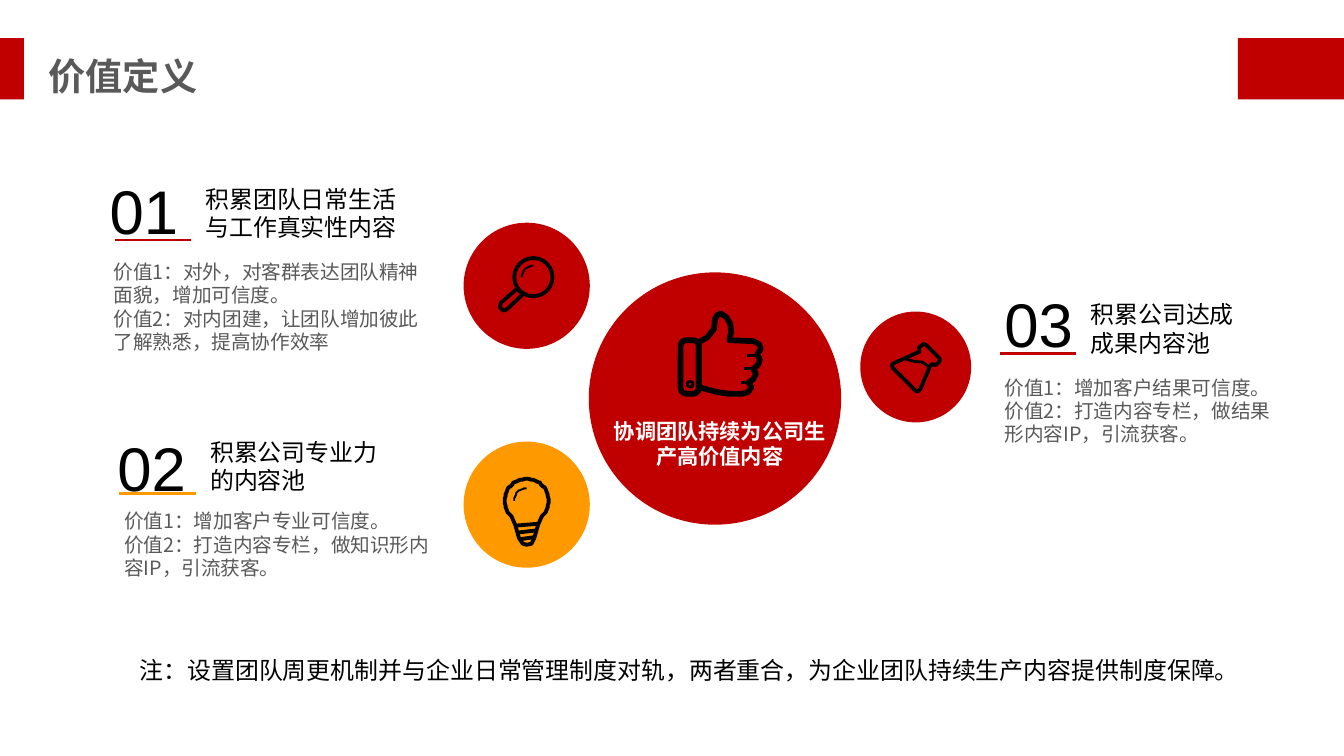
from dataclasses import dataclass
from math import cos, radians, sin

from lxml.etree import SubElement
from pptx import Presentation
from pptx.dml.color import RGBColor
from pptx.enum.shapes import MSO_CONNECTOR, MSO_SHAPE
from pptx.enum.text import MSO_ANCHOR, MSO_AUTO_SIZE, PP_ALIGN
from pptx.oxml.ns import qn
from pptx.util import Emu, Pt

PX = 9144  # EMU per px, 100 px to the inch


@dataclass(frozen=True)
class Theme:
    red: str = "C00000"
    orange: str = "FF9900"
    grey: str = "595959"
    black: str = "000000"
    white: str = "FFFFFF"
    latin: str = "Arial"
    cjk: str = "Noto Sans CJK SC"
    note_font: str = "Calibri"
    title: float = 28
    number: float = 46.4
    heading: float = 18
    center: float = 16
    body: float = 14.8
    leading: float = 1.19


def px(n):
    return Emu(round(n * PX))


def arc(cx, cy, radius, start, end, step=6):
    """Points along a circle, in degrees clockwise from the right."""
    return [(cx + radius * cos(radians(a)), cy + radius * sin(radians(a)))
            for a in range(start, end + 1, step)]


class Page:
    def __init__(self, s, theme):
        self.s, self.t = s, theme

    def set_text(self, sp, lines, size, color, font, bold=False, align=PP_ALIGN.LEFT):
        tf = sp.text_frame
        tf.word_wrap = True
        tf.auto_size = MSO_AUTO_SIZE.NONE
        tf.vertical_anchor = MSO_ANCHOR.TOP
        tf.margin_left = tf.margin_right = px(10)
        tf.margin_top, tf.margin_bottom = px(7), px(5)
        for i, line in enumerate(lines):
            p = tf.add_paragraph() if i else tf.paragraphs[0]
            p.alignment = align
            p.space_before = p.space_after = Pt(0)
            p.line_spacing = Pt(round(size * self.t.leading, 1))
            pPr = p._p.get_or_add_pPr()
            pPr.set("marL", "0")
            pPr.set("indent", "0")
            SubElement(pPr, qn("a:buNone"))
            r = p.add_run()
            r.text = line
            r.font.size, r.font.bold, r.font.name = Pt(size), bold, font
            r.font.color.rgb = RGBColor.from_string(color)
            SubElement(r._r.get_or_add_rPr(), qn("a:ea")).set("typeface", self.t.cjk)

    def text(self, box, lines, *style, **more):
        sp = self.s.shapes.add_textbox(*map(px, box))
        self.set_text(sp, lines, *style, **more)

    def placeholder(self, idx, box, lines, *style, **more):
        sp = next(h for h in self.s.placeholders if h.placeholder_format.idx == idx)
        sp.left, sp.top, sp.width, sp.height = map(px, box)
        self.set_text(sp, lines, *style, **more)

    def finish(self, sp, fill=None, stroke=None):
        sp.shadow.inherit = False
        if fill:
            sp.fill.solid()
            sp.fill.fore_color.rgb = RGBColor.from_string(fill)
        else:
            sp.fill.background()
        if stroke:
            sp.line.color.rgb = RGBColor.from_string(self.t.black)
            sp.line.width = px(stroke)
        else:
            sp.line.fill.background()

    def shape(self, kind, box, fill=None, stroke=None):
        sp = self.s.shapes.add_shape(kind, *map(px, box))
        self.finish(sp, fill, stroke)
        return sp

    def circle(self, cx, cy, radius, fill=None, stroke=None):
        box = (cx - radius, cy - radius, 2 * radius, 2 * radius)
        self.shape(MSO_SHAPE.OVAL, box, fill, stroke)

    def outline(self, points, stroke, close=False):
        fb = self.s.shapes.build_freeform(*points[0], scale=PX)
        fb.add_line_segments(points[1:], close=close)
        self.finish(fb.convert_to_shape(), stroke=stroke)

    def rule(self, x, y, length, color):
        c = self.s.shapes.add_connector(
            MSO_CONNECTOR.STRAIGHT, *map(px, (x, y, x + length, y)))
        c.line.color.rgb = RGBColor.from_string(color)
        c.line.width = Pt(2)
        SubElement(c._element.spPr, qn("a:effectLst"))


def magnifier(page):
    page.circle(558, 290, 20, stroke=4)
    page.outline([(541, 302), (524, 317), (523, 321), (525, 324), (528, 325),
                  (531, 323), (547, 308)], 4, close=True)
    page.outline(arc(558, 290, 12, 180, 270), 2)


def bulb(page):
    base = [(563, 549), (559, 563), (556, 569), (551, 570), (547, 569),
            (543, 563), (539, 549), (535, 540)]
    page.outline(arc(551, 524, 23, 150, 390) + [(567, 540)] + base, 4, close=True)
    page.outline(arc(551, 524, 13, 180, 270), 2)
    for left, right, y in ((539, 563, 549), (543, 561, 556), (545, 559, 563)):
        page.outline([(left, y + 1), (right, y - 1)], 4)


def thumb(page):
    cuff = page.shape(MSO_SHAPE.ROUNDED_RECTANGLE, (712, 356, 19, 56), stroke=6)
    cuff.adjustments[0] = 0.3
    page.circle(722, 402, 3, stroke=3)
    page.outline([(731, 358), (740, 353), (747, 344), (748, 334), (750, 330),
                  (754, 328), (760, 332), (764, 339), (765, 347), (763, 356),
                  (788, 357), (794, 360), (796, 365), (792, 371), (795, 376),
                  (793, 382), (788, 386), (791, 391), (788, 397), (783, 400),
                  (786, 405), (783, 410), (777, 412), (762, 412), (749, 410),
                  (731, 405)], 6, close=True)
    for left, y in ((781, 372), (778, 386), (775, 400)):
        page.outline([(left, y), (left + 10, y)], 3)


def flask(page):
    page.outline([(935, 380), (962, 368), (961, 364), (966, 360), (969, 361),
                  (983, 375), (983, 378), (979, 382), (975, 381), (973, 383),
                  (963, 407), (960, 410), (957, 408), (934, 385), (933, 382)],
                 4, close=True)
    page.outline([(948, 376), (956, 378), (965, 379), (972, 384)], 3)


def main():
    prs = Presentation()
    prs.slide_width, prs.slide_height = px(1406), px(791)
    t = Theme()
    page = Page(prs.slides.add_slide(prs.slide_layouts.get_by_name("Comparison")), t)

    # Title bar
    for left, width in ((0, 25), (1295, 111)):
        page.shape(MSO_SHAPE.RECTANGLE, (left, 40, width, 64), t.red)
    page.placeholder(0, (41, 49, 300, 58), ["价值定义"],
                     t.title, t.grey, t.cjk, bold=True)

    # Numbered values: number, rule, heading, body
    values = [
        ((105, 175), (120, 251, t.red), (205, 186), (109, 265, 355, 109),
         ["积累团队日常生活", "与工作真实性内容"],
         ["价值1：对外，对客群表达团队精神面貌，增加可信度。",
          "价值2：对内团建，让团队增加彼此了解熟悉，提高协作效率"]),
        ((113, 443), (125, 516, t.orange), (210, 451), (120, 526, 360, 85),
         ["积累公司专业力", "的内容池"],
         ["价值1：增加客户专业可信度。",
          "价值2：打造内容专栏，做知识形内", "容IP，引流获客。"]),
        ((1041, 293), (1046, 370, t.red), (1131, 307), (1041, 386, 300, 110),
         ["积累公司达成", "成果内容池"],
         ["价值1：增加客户结果可信度。",
          "价值2：打造内容专栏，做结果形内容IP，引流获客。"]),
    ]
    for i, (number, (x, y, color), heading, body, head, lines) in enumerate(values, 1):
        page.text((*number, 100, 88), [f"{i:02}"], t.number, t.black, t.latin)
        page.rule(x, y, 80, color)
        page.text((*heading, 240, 71), head, t.heading, t.black, t.latin)
        page.placeholder(i, body, lines, t.body, t.grey, t.cjk)

    # Circles and icons
    for cx, cy, radius, fill, icon in (
            (551, 299, 66, t.red, magnifier), (551, 528, 66, t.orange, bulb),
            (748, 417, 132, t.red, thumb), (958, 384, 58, t.red, flask)):
        page.circle(cx, cy, radius, fill)
        icon(page)
    page.text((624, 431, 258, 64), ["协调团队持续为公司生产高价值内容"],
              t.center, t.white, t.cjk, bold=True, align=PP_ALIGN.CENTER)

    # Note
    page.placeholder(4, (136, 679, 1215, 40),
                     ["注：设置团队周更机制并与企业日常管理制度对轨，两者重合，"
                      "为企业团队持续生产内容提供制度保障。"],
                     t.heading, t.black, t.note_font)
    prs.save("out.pptx")


if __name__ == "__main__":
    main()
